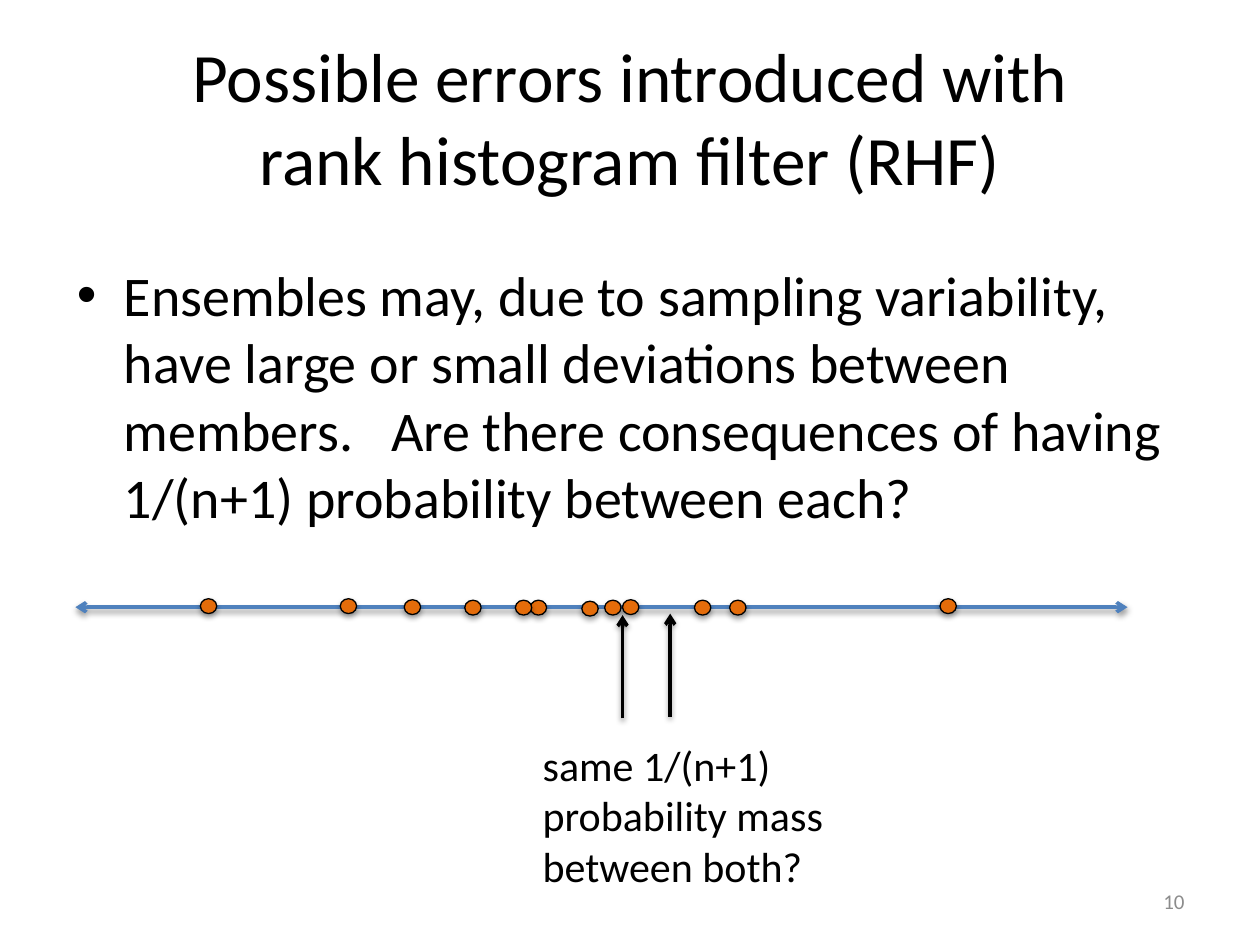
from lxml import etree
from pptx import Presentation
from pptx.dml.color import RGBColor
from pptx.enum.shapes import MSO_CONNECTOR, MSO_SHAPE
from pptx.enum.text import MSO_ANCHOR, PP_ALIGN
from pptx.oxml.ns import qn
from pptx.util import Cm, Pt

STRAIGHT, OVAL = MSO_CONNECTOR.STRAIGHT, MSO_SHAPE.OVAL
TOP, MIDDLE = MSO_ANCHOR.TOP, MSO_ANCHOR.MIDDLE
LEFT, CENTER, RIGHT = PP_ALIGN.LEFT, PP_ALIGN.CENTER, PP_ALIGN.RIGHT
FONT = "Calibri"

TITLE = ["Possible errors introduced with\vrank histogram filter (RHF)"]
QUESTION = ["Ensembles may, due to sampling variability, have large or small "
            "deviations between members.   Are there consequences of having "
            "1/(n+1) probability between each?"]
LABEL = ["same 1/(n+1)", "probability mass", "between both?"]
TEXTS = [
    (TITLE, (1.27, 0.76, 22.86, 3.18), 39.6, "000000", CENTER, MIDDLE, True),
    (QUESTION, (1.3, 5.13, 22.86, 12.57), 32, "000000", LEFT, TOP, True),
    (LABEL, (10.69, 14.78, 6.22, 3.33), 24, "000000", LEFT, TOP, False),
    (["10"], (18.21, 17.65, 5.92, 1.02), 12, "8C8C8C", RIGHT, MIDDLE, True),
]
AXIS = ((1.52, 12.24), (22.73, 12.24), "4F81BD", ("headEnd", "tailEnd"))
POINTERS = [
    ((12.55, 14.48), (12.55, 12.4), "000000", ("tailEnd",)),
    ((13.51, 14.45), (13.51, 12.37), "000000", ("tailEnd",)),
]
MEMBERS = [(4.04, 12.07), (6.86, 12.07), (8.15, 12.09), (12.55, 12.09),
           (9.37, 12.1), (11.73, 12.12), (12.19, 12.1), (10.69, 12.1),
           (10.39, 12.1), (14.0, 12.1), (14.71, 12.1), (18.95, 12.07)]
MEMBER_SIZE = (0.33, 0.3)


def rgb(value):
    return RGBColor.from_string(value)


def add_shadow(sp, alpha, dist):
    effects = etree.SubElement(sp._element.spPr, qn("a:effectLst"))
    shadow = etree.SubElement(effects, qn("a:outerShdw"), blurRad="40000",
                              dist=str(dist), dir="5400000", rotWithShape="0")
    color = etree.SubElement(shadow, qn("a:srgbClr"), val="000000")
    etree.SubElement(color, qn("a:alpha"), val=str(alpha * 1000))


def add_text(s, lines, box, size, color, align, anchor, wrap):
    sp = s.shapes.add_textbox(*map(Cm, box))
    tf = sp.text_frame
    for name, value in {"word_wrap": wrap, "vertical_anchor": anchor}.items():
        setattr(tf, name, value)
    tf.text = "\n".join(lines)
    for p in tf.paragraphs:
        p.alignment = align
        for r in p.runs:
            for name, value in {"name": FONT, "size": Pt(size)}.items():
                setattr(r.font, name, value)
            r.font.color.rgb = rgb(color)
    return sp


def add_bullet(p):
    p.space_before = Pt(6.4)
    pPr = p._p.get_or_add_pPr()
    pPr.set("marL", str(Cm(0.95)))
    pPr.set("indent", str(-Cm(0.95)))
    etree.SubElement(pPr, qn("a:buFont"), typeface="Arial")
    etree.SubElement(pPr, qn("a:buChar"), char="•")


def add_arrow(s, start, end, color, heads):
    sp = s.shapes.add_connector(STRAIGHT, *map(Cm, start + end))
    sp.line.color.rgb = rgb(color)
    sp.line.width = Pt(2)
    ln = sp.line._get_or_add_ln()
    for head in heads:
        etree.SubElement(ln, qn(f"a:{head}"), type="arrow")
    add_shadow(sp, 38, 20000)


def add_member(s, place):
    sp = s.shapes.add_shape(OVAL, *map(Cm, place + MEMBER_SIZE))
    sp.fill.solid()
    sp.fill.fore_color.rgb = rgb("E46C0A")
    sp.line.color.rgb = rgb("000000")
    sp.line.width = Pt(0.75)
    add_shadow(sp, 35, 23000)


def main():
    prs = Presentation()
    prs.slide_width, prs.slide_height = Cm(25.4), Cm(19.05)
    s = prs.slides.add_slide(prs.slide_layouts[6])
    title, question, label, number = [add_text(s, *text) for text in TEXTS]
    add_bullet(question.text_frame.paragraphs[0])
    add_arrow(s, *AXIS)
    for place in MEMBERS:
        add_member(s, place)
    for pointer in POINTERS:
        add_arrow(s, *pointer)
    prs.save("out.pptx")


if __name__ == "__main__":
    main()
